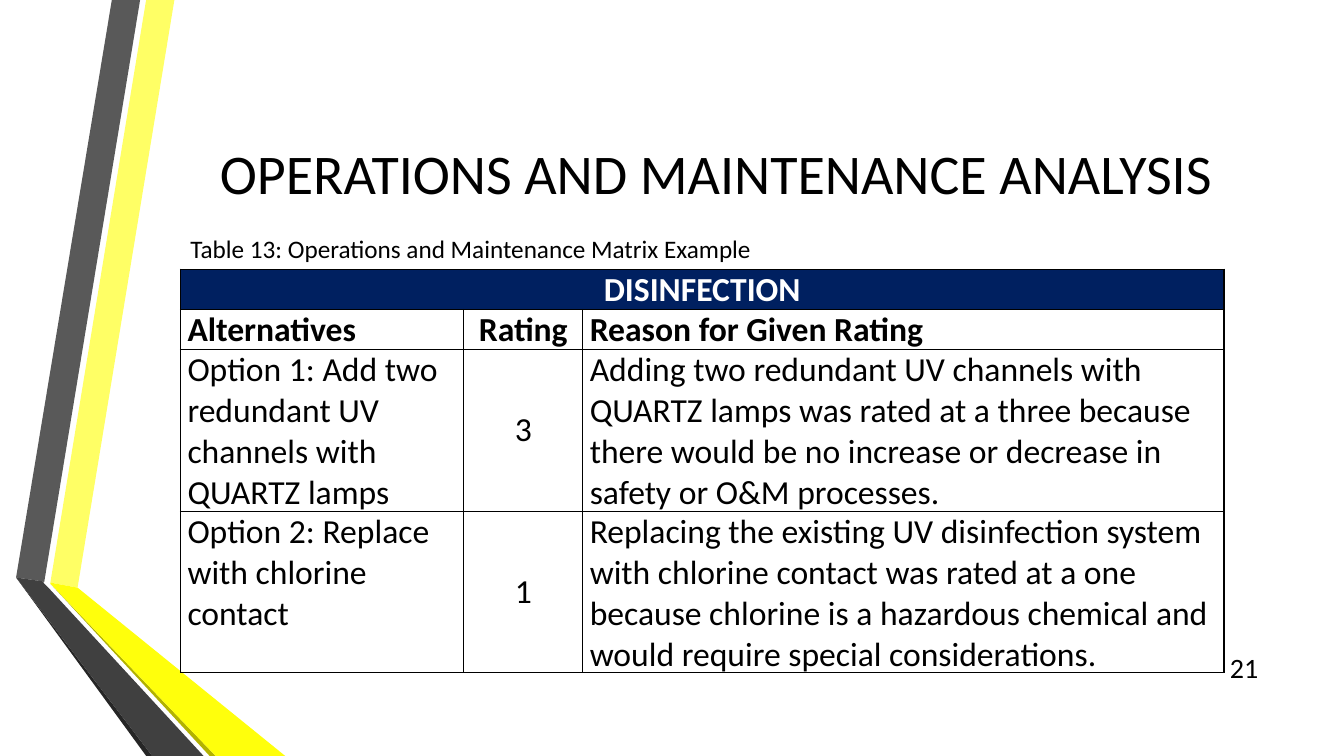
"""Build the operations and maintenance analysis slide."""
from lxml import etree
from pptx import Presentation
from pptx.dml.color import RGBColor
from pptx.enum.text import MSO_ANCHOR, PP_ALIGN
from pptx.oxml.ns import qn
from pptx.util import Inches, Pt

LEFT, CENTER, RIGHT = PP_ALIGN.LEFT, PP_ALIGN.CENTER, PP_ALIGN.RIGHT
TOP, MIDDLE = MSO_ANCHOR.TOP, MSO_ANCHOR.MIDDLE
BLACK, WHITE, NAVY = "000000", "FFFFFF", "002060"
UNIT = Inches(0.01)


def rgb(code):
    return RGBColor.from_string(code)


def style(frame, size, align=LEFT, color=BLACK, bold=False):
    frame.word_wrap = True
    para = frame.paragraphs[0]
    para.alignment = align
    for run in para.runs:
        font = run.font
        font.name, font.size, font.bold = "Calibri", Pt(size), bold
        font.color.rgb = rgb(color)


deck = Presentation()
deck.slide_width, deck.slide_height = Inches(13.33), Inches(7.5)
slide = deck.slides.add_slide(deck.slide_layouts[5])
shapes = slide.shapes

bands = [
    ("FFFF65", [(50, 578), (77, 583), (173, 0), (145, 0)]),
    ("595959", [(139, 0), (111, 0), (16, 573), (44, 577)]),
    ("262626", [(16, 573), (145, 750), (151, 750)]),
    ("B2B200", [(50, 579), (208, 750), (214, 750)]),
    ("FFFF0C", [(50, 579), (214, 750), (283, 750), (77, 583), (50, 578)]),
    ("404040", [(202, 750), (48, 583), (43, 578), (44, 577), (16, 573), (151, 750)]),
]
for color, points in bands:
    pen = shapes.build_freeform(*points[0], scale=UNIT)
    pen.add_line_segments(points[1:], close=True)
    band = pen.convert_to_shape()
    band.shadow.inherit = False
    band.fill.solid()
    band.fill.fore_color.rgb = rgb(color)
    band.line.fill.background()

title = shapes.title
title.left, title.top = Inches(1.62), Inches(0.75)
title.width, title.height = Inches(10.96), Inches(1.92)
title.text_frame.text = "OPERATIONS AND MAINTENANCE ANALYSIS"
title.text_frame.vertical_anchor = MIDDLE
style(title.text_frame, 40, CENTER)

labels = [
    ("21", 11.98, 6.42, 0.6, 20, RIGHT, MIDDLE),
    ("Table 13: Operations and Maintenance Matrix Example", 1.79, 2.27, 6.64, 18, LEFT, TOP),
]
for text, left, top, width, size, align, anchor in labels:
    box = shapes.add_textbox(Inches(left), Inches(top), Inches(width), Inches(0.4))
    box.text_frame.text = text
    box.text_frame.vertical_anchor = anchor
    style(box.text_frame, size, align)

rows = [
    ("DISINFECTION", "", ""),
    ("Alternatives", "Rating", "Reason for Given Rating"),
    ("Option 1: Add two redundant UV channels with QUARTZ lamps", "3",
     "Adding two redundant UV channels with QUARTZ lamps was rated at a three "
     "because there would be no increase or decrease in safety or O&M processes."),
    ("Option 2: Replace with chlorine contact", "1",
     "Replacing the existing UV disinfection system with chlorine contact was rated "
     "at a one because chlorine is a hazardous chemical and would require special "
     "considerations."),
]
widths = [2.81, 1.18, 6.36]
lines = [1, 1, 4, 4]
pitch = 0.4

frame = shapes.add_table(len(rows), len(widths), Inches(1.79), Inches(2.67),
                         Inches(sum(widths)), Inches(pitch * sum(lines)))
table = frame.table
table.first_row = table.horz_banding = False
for col, width in zip(table.columns, widths):
    col.width = Inches(width)
for row, count in zip(table.rows, lines):
    row.height = Inches(pitch * count)

for i, texts in enumerate(rows):
    for j, text in enumerate(texts):
        cell = table.cell(i, j)
        head = i == 0
        mid = head or j == 1
        cell.text_frame.text = text
        cell.margin_left = cell.margin_right = Inches(0.07)
        cell.margin_top = cell.margin_bottom = 0
        cell.vertical_anchor = MIDDLE if mid else TOP
        style(cell.text_frame, 24, CENTER if mid else LEFT, WHITE if head else BLACK, i < 2)
        props = cell._tc.get_or_add_tcPr()
        for side in ("a:lnL", "a:lnR", "a:lnT", "a:lnB"):
            edge = etree.SubElement(props, qn(side), w=str(Pt(1)))
            fill = etree.SubElement(edge, qn("a:solidFill"))
            etree.SubElement(fill, qn("a:srgbClr"), val=BLACK)
        if head:
            cell.fill.solid()
            cell.fill.fore_color.rgb = rgb(NAVY)
        else:
            cell.fill.background()
table.cell(0, 0).merge(table.cell(0, 2))

deck.save("out.pptx")
